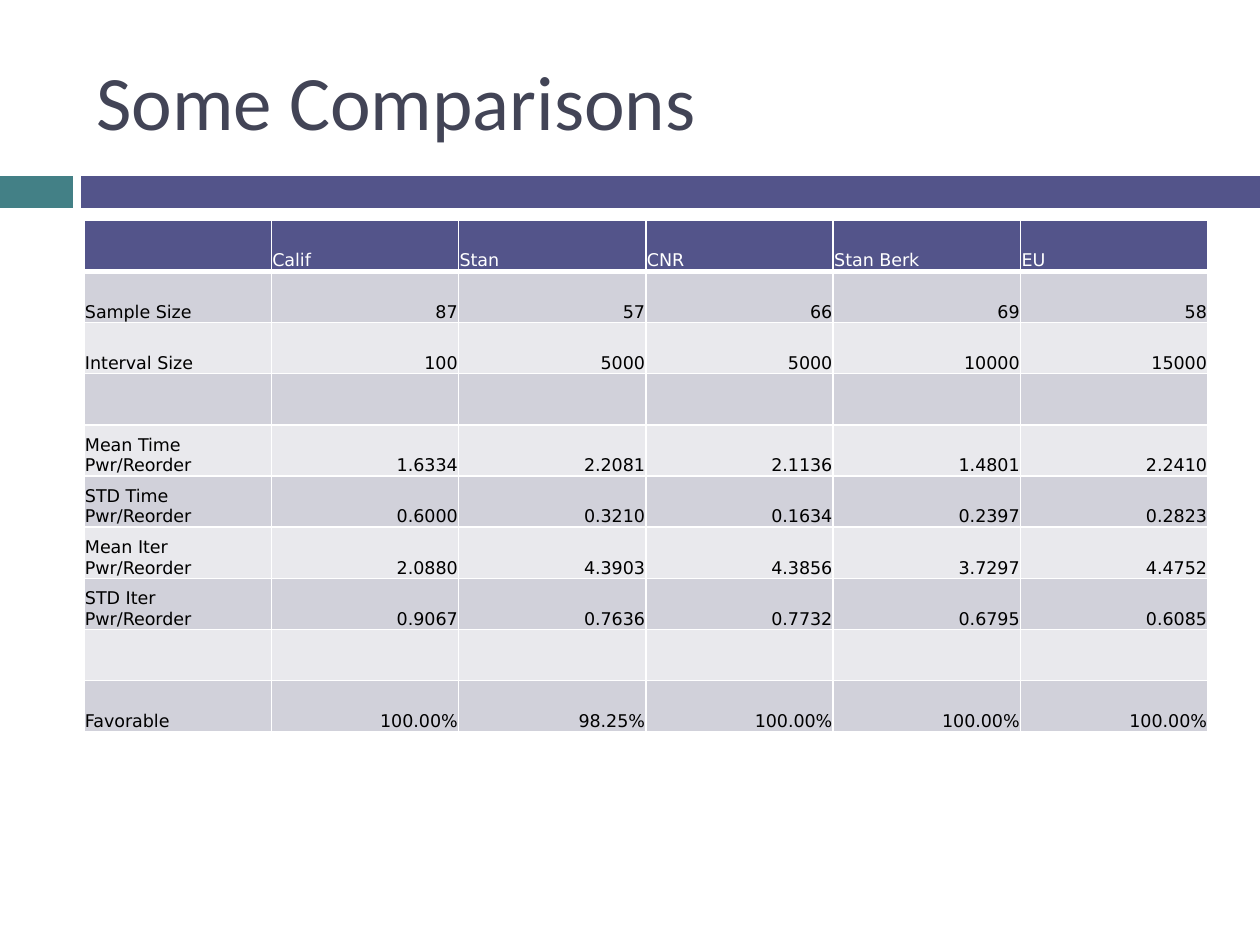
from dataclasses import dataclass

from lxml.etree import SubElement
from pptx import Presentation
from pptx.dml.color import RGBColor
from pptx.enum.shapes import MSO_SHAPE
from pptx.enum.text import MSO_ANCHOR, PP_ALIGN
from pptx.oxml.ns import qn
from pptx.util import Emu, Pt

EMU_PER_PX = 914400 / 126
SLIDE_WIDTH, SLIDE_HEIGHT = 1260, 945

COMPARISONS = [
    ["", "Calif", "Stan", "CNR", "Stan Berk", "EU"],
    ["Sample Size", "87", "57", "66", "69", "58"],
    ["Interval Size", "100", "5000", "5000", "10000", "15000"],
    [""] * 6,
    ["Mean Time\nPwr/Reorder", "1.6334", "2.2081", "2.1136", "1.4801", "2.2410"],
    ["STD Time\nPwr/Reorder", "0.6000", "0.3210", "0.1634", "0.2397", "0.2823"],
    ["Mean Iter Pwr/Reorder", "2.0880", "4.3903", "4.3856", "3.7297", "4.4752"],
    ["STD Iter\nPwr/Reorder", "0.9067", "0.7636", "0.7732", "0.6795", "0.6085"],
    [""] * 6,
    ["Favorable", "100.00%", "98.25%", "100.00%", "100.00%", "100.00%"],
]


@dataclass(frozen=True)
class Theme:
    teal: str = "438086"
    indigo: str = "53548A"
    title_ink: str = "424456"
    header_ink: str = "FFFFFF"
    body_ink: str = "000000"
    odd_band: str = "D1D1DA"
    even_band: str = "E9E9ED"
    rule: str = "FFFFFF"
    title_font: str = "Calibri"
    table_font: str = "DejaVu Sans"
    title_size: int = 44
    table_size: int = 10
    thin_rule: int = 1
    header_rule: int = 3


def px(length):
    return Emu(round(length * EMU_PER_PX))


class SlideBuilder:
    def __init__(self, slide, theme):
        self.slide = slide
        self.theme = theme

    def bar(self, left, top, width, height, color):
        bar = self.slide.shapes.add_shape(
            MSO_SHAPE.RECTANGLE, px(left), px(top), px(width), px(height))
        bar.shadow.inherit = False
        bar.fill.solid()
        bar.fill.fore_color.rgb = RGBColor.from_string(color)
        bar.line.fill.background()

    def title(self, text, left, top, width, height):
        theme = self.theme
        frame = self.slide.shapes.add_textbox(
            px(left), px(top), px(width), px(height)).text_frame
        frame.word_wrap = True
        frame.vertical_anchor = MSO_ANCHOR.MIDDLE
        frame.text = text
        self.style_text(frame, theme.title_font, theme.title_size, theme.title_ink)

    def style_text(self, frame, font_name, size, color, align=PP_ALIGN.LEFT):
        for paragraph in frame.paragraphs:
            paragraph.alignment = align
            for run in paragraph.runs:
                run.font.name = font_name
                run.font.size = Pt(size)
                run.font.color.rgb = RGBColor.from_string(color)

    def table(self, rows, left, top, width, height):
        grid = self.slide.shapes.add_table(
            len(rows), len(rows[0]), px(left), px(top), px(width), px(height)).table
        for row_index, row in enumerate(rows):
            for column_index, text in enumerate(row):
                self.cell(grid.cell(row_index, column_index), text, row_index, column_index)

    def cell(self, cell, text, row_index, column_index):
        theme = self.theme
        is_header = row_index == 0
        self.borders(
            cell,
            top=theme.header_rule if row_index == 1 else theme.thin_rule,
            bottom=theme.header_rule if is_header else theme.thin_rule)
        band = theme.odd_band if row_index % 2 else theme.even_band
        cell.fill.solid()
        cell.fill.fore_color.rgb = RGBColor.from_string(theme.indigo if is_header else band)
        cell.margin_left = cell.margin_right = cell.margin_top = px(1)
        cell.margin_bottom = 0
        cell.vertical_anchor = MSO_ANCHOR.BOTTOM
        cell.text_frame.text = text
        is_label = is_header or column_index == 0
        self.style_text(
            cell.text_frame, theme.table_font, theme.table_size,
            theme.header_ink if is_header else theme.body_ink,
            PP_ALIGN.LEFT if is_label else PP_ALIGN.RIGHT)

    def borders(self, cell, top, bottom):
        """Rule all four sides; call before the fill, which must follow the lines."""
        thin = self.theme.thin_rule
        properties = cell._tc.get_or_add_tcPr()
        for side, weight in (("L", thin), ("R", thin), ("T", top), ("B", bottom)):
            line = SubElement(properties, qn(f"a:ln{side}"), w=str(Pt(weight)))
            fill = SubElement(line, qn("a:solidFill"))
            SubElement(fill, qn("a:srgbClr"), val=self.theme.rule)


def main():
    presentation = Presentation()
    presentation.slide_width = px(SLIDE_WIDTH)
    presentation.slide_height = px(SLIDE_HEIGHT)
    theme = Theme()
    builder = SlideBuilder(
        presentation.slides.add_slide(presentation.slide_layouts[6]), theme)

    builder.bar(0, 176, 73, 32, theme.teal)
    builder.bar(81, 176, SLIDE_WIDTH - 81, 32, theme.indigo)
    builder.title("Some Comparisons", 84, 32, 1124, 136)
    builder.table(COMPARISONS, 84, 220, 1124, 512)
    presentation.save("out.pptx")


if __name__ == "__main__":
    main()
